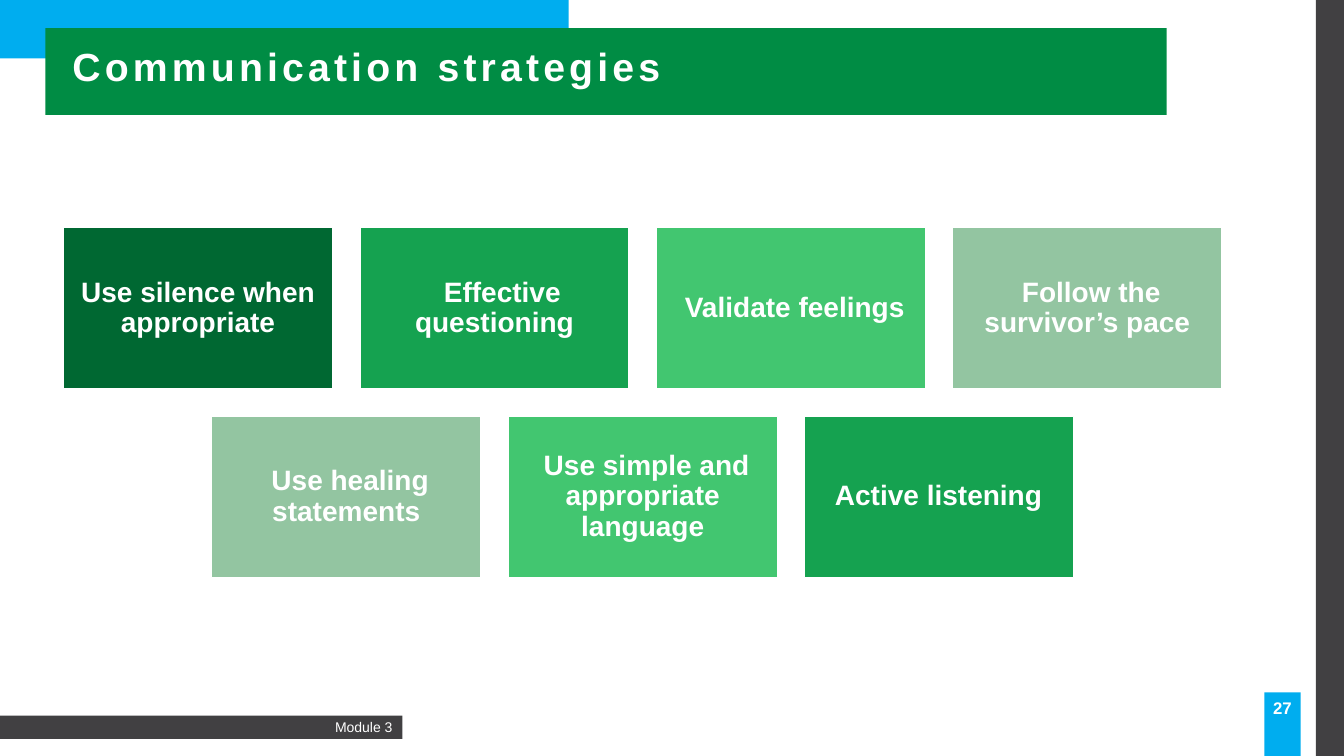
from pptx import Presentation
from pptx.dml.color import RGBColor
from pptx.enum.shapes import MSO_SHAPE
from pptx.enum.text import MSO_ANCHOR, PP_ALIGN
from pptx.util import Inches, Pt

WHITE = RGBColor(0xFF, 0xFF, 0xFF)
BLUE = RGBColor(0x00, 0xAD, 0xEF)
TITLE_GREEN = RGBColor(0x00, 0x8C, 0x44)
CHARCOAL = RGBColor(0x41, 0x40, 0x42)
DARK_GREEN = RGBColor(0x00, 0x68, 0x32)
GREEN = RGBColor(0x15, 0xA2, 0x50)
LIGHT_GREEN = RGBColor(0x42, 0xC6, 0x70)
PALE_GREEN = RGBColor(0x93, 0xC5, 0xA1)

CARD_WIDTH, CARD_HEIGHT = 2.67, 1.6
CARD_STEP = 2.94
# Each row: left edge, top edge, cards
CARD_ROWS = [
    (0.63, 2.26, [
        ("Use silence when appropriate", DARK_GREEN),
        ("  Effective questioning", GREEN),
        (" Validate feelings", LIGHT_GREEN),
        (" Follow the survivor’s pace", PALE_GREEN),
    ]),
    (2.1, 4.13, [
        (" Use healing statements", PALE_GREEN),
        (" Use simple and appropriate language", LIGHT_GREEN),
        (" Active listening ", GREEN),
    ]),
]

deck = Presentation()
deck.slide_width, deck.slide_height = Inches(13.33), Inches(7.5)
page = deck.slides.add_slide(deck.slide_layouts[6])


def add_block(left, top, width, height, color):
    block = page.shapes.add_shape(
        MSO_SHAPE.RECTANGLE, Inches(left), Inches(top), Inches(width), Inches(height))
    block.shadow.inherit = False
    block.fill.solid()
    block.fill.fore_color.rgb = color
    block.line.fill.background()
    return block


def write(shape, text, size, align, anchor=MSO_ANCHOR.MIDDLE, bold=True):
    """Put one white Arial paragraph in the shape and return it."""
    frame = shape.text_frame
    frame.word_wrap = True
    frame.vertical_anchor = anchor
    para = frame.paragraphs[0]
    para.text = text
    para.alignment = align
    para.font.name = "Arial"
    para.font.size = Pt(size)
    para.font.bold = bold
    para.font.color.rgb = WHITE
    return para


# Frame of the page
add_block(0, 0, 5.64, 0.58, BLUE)
add_block(0.45, 0.28, 11.12, 0.86, TITLE_GREEN)
add_block(13.05, 0, 0.28, 7.5, CHARCOAL)

footer = add_block(0, 7.1, 3.99, 0.23, CHARCOAL)
write(footer, "Module 3", 10, PP_ALIGN.RIGHT, bold=False)

page_number = add_block(12.54, 6.87, 0.36, 0.63, BLUE)
page_number.text_frame.margin_left = page_number.text_frame.margin_right = Inches(0.04)
write(page_number, "27", 12, PP_ALIGN.CENTER, MSO_ANCHOR.TOP)

# Title
title = page.shapes.add_textbox(Inches(0.62), Inches(0.38), Inches(9.07), Inches(0.6))
heading = write(title, "Communication strategies ", 28, PP_ALIGN.LEFT)
heading.line_spacing = 0.9
heading.space_before = Pt(10)
heading.runs[0].font._element.set("spc", "300")

# Strategy cards
for row_left, row_top, cards in CARD_ROWS:
    for column, (strategy, color) in enumerate(cards):
        card = add_block(row_left + column * CARD_STEP, row_top, CARD_WIDTH, CARD_HEIGHT, color)
        card.line.color.rgb = WHITE
        card.line.width = Pt(1)
        frame = card.text_frame
        frame.margin_left = frame.margin_right = Inches(0.08)
        frame.margin_top = frame.margin_bottom = Inches(0.08)
        write(card, strategy, 20, PP_ALIGN.CENTER).line_spacing = 0.9

deck.save("out.pptx")
